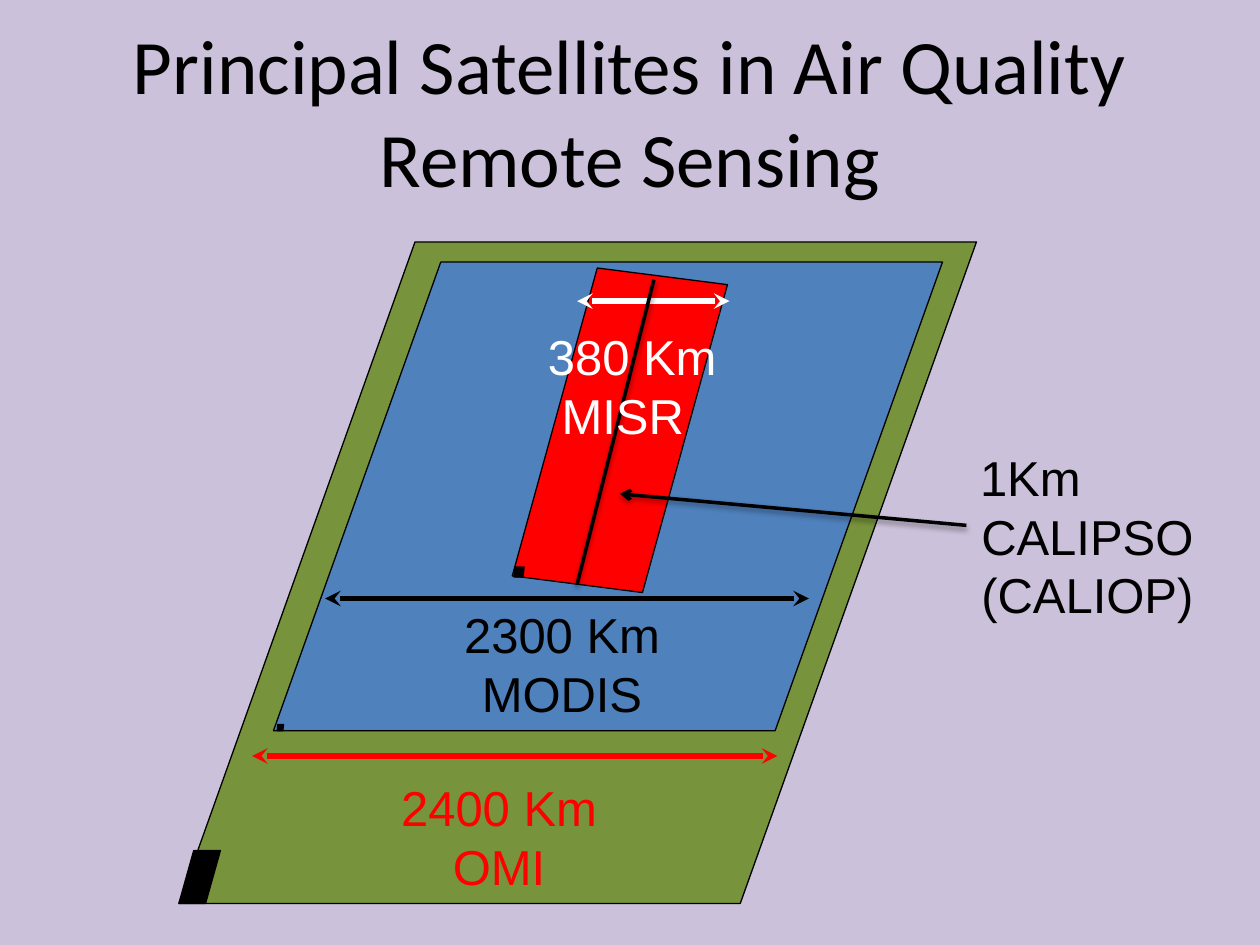
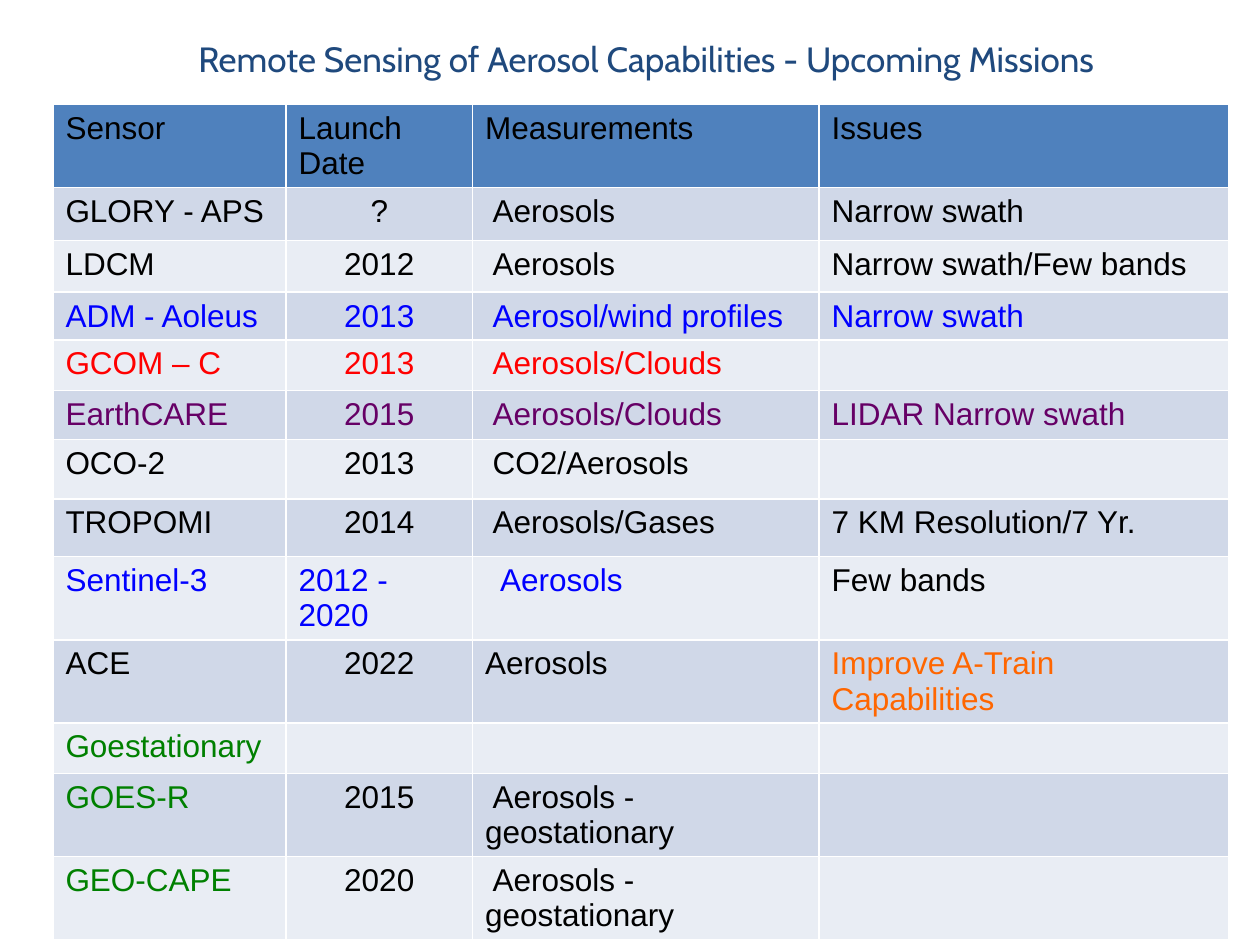
"""Build two slides on satellite swaths and upcoming aerosol missions."""
from dataclasses import dataclass

from lxml import etree
from pptx import Presentation, util as u
from pptx.dml.color import RGBColor
from pptx.enum import shapes, text
from pptx.oxml import parse_xml
from pptx.oxml.ns import nsdecls, qn

COLOURS = dict(
    ink="000000", white="FFFFFF", lilac="CCC1DA", olive="77933C", blue="4F81BD",
    red="FF0000", navy="1F497D", dark_band="D0D8E8", light_band="E9EDF4",
    link_blue="0000FF", purple="660066", orange="FF6600", green="008000",
)


@dataclass(frozen=True)
class Style:
    """Type face, size and colour of a piece of text."""
    font: str
    size: int
    colour: str


@dataclass(frozen=True)
class Theme:
    """Text styles and line widths shared by both slides."""
    main_title: Style = Style("Calibri", 44, "ink")
    table_title: Style = Style("Cabin", 20, "navy")
    label_font: str = "Arial"
    label_size: int = 28
    cell_size: int = 18
    outline: float = 0.75
    swath_width: float = 3
    track_width: float = 2
    cell_border: float = 1


THEME = Theme()
LEFT, CENTER = text.PP_ALIGN.LEFT, text.PP_ALIGN.CENTER

SWATHS = [
    ((1.42, 1.92, 6.33, 5.25), 0.357, 0, "olive"),
    ((2.17, 2.08, 5.31, 3.72), 0.357, 0, "blue"),
    ((4.22, 2.16, 1.4, 2.51), 0.256, 7.3, "red"),
]
PIXELS = [
    ((1.42, 6.75, 0.33, 0.42), 0.357, 0, "ink"),
    ((2.2, 5.75, 0.05, 0.05), 0.106, 0, "ink"),
    ((4.08, 4.5, 0.08, 0.08), 0.106, 0, "ink"),
]
WIDTH_ARROWS = [
    (4.58, 5.79, 2.39, "white"),
    (2.58, 6.42, 4.75, "ink"),
    (2, 6.17, 6, "red"),
]
TRACKS = [
    ((5.19, 2.22), (4.58, 4.64), None),
    ((7.67, 4.17), (4.92, 3.92), "arrow"),
]
LABELS = [
    ((3.5, 4.75, 1.92, 1.04), [("2300 Km MODIS", CENTER, 0)], "ink", True),
    ((3, 6.12, 1.92, 1.04), [("2400 Km OMI", CENTER, 0)], "red", True),
    ((7.68, 3.5, 1.9, 1.99),
     [("1Km", LEFT, 0), ("CALIPSO", CENTER, 0), ("(CALIOP)", CENTER, 0)], "ink", True),
    ((4.25, 2.54, 1.56, 1.51), [("380 Km", LEFT, 0), ("MISR", LEFT, 0.11)], "white", False),
]

HEADERS = ["Sensor", "Launch Date", "Measurements", "Issues"]
COLUMN_WIDTHS = [1.85, 1.48, 2.75, 3.25]
HEADER_HEIGHT = 0.66
MISSIONS = [
    (0.42, "ink", ["GLORY - APS", "?", "Aerosols", "Narrow swath"]),
    (0.41, "ink", ["LDCM", "2012", "Aerosols", "Narrow swath/Few bands"]),
    (0.38, "link_blue", ["ADM - Aoleus", "2013", "Aerosol/wind profiles", "Narrow swath"]),
    (0.4, "red", ["GCOM – C", "2013", "Aerosols/Clouds", ""]),
    (0.39, "purple", ["EarthCARE", "2015", "Aerosols/Clouds", "LIDAR Narrow swath"]),
    (0.47, "ink", ["OCO-2", "2013", "CO2/Aerosols", ""]),
    (0.46, "ink", ["TROPOMI", "2014", "Aerosols/Gases", "7 KM Resolution/7 Yr."]),
    (0.66, "link_blue", ["Sentinel-3", "2012 - 2020", "Aerosols", "Few bands"]),
    (0.66, "ink", ["ACE", "2022", "Aerosols", "Improve A-Train Capabilities"]),
    (0.4, "green", ["Goestationary", "", "", ""]),
    (0.66, "ink", ["GOES-R", "2015", "Aerosols - geostationary", ""]),
    (0.66, "ink", ["GEO-CAPE", "2020", "Aerosols - geostationary", ""]),
]
CELL_COLOURS = {"Few bands": "ink", "Improve A-Train Capabilities": "orange",
                "GOES-R": "green", "GEO-CAPE": "green"}
MEASUREMENT_INDENT = 0.06
SENSOR_INDENTS = {"Sentinel-3": 0.12, "ACE": 0}


def colour(name):
    return RGBColor.from_string(COLOURS[name])


def inches(values):
    return [u.Inches(value) for value in values]


def paint(fill, name):
    fill.solid()
    fill.fore_color.rgb = colour(name)


def add_slide(presentation, background):
    slide = presentation.slides.add_slide(presentation.slide_layouts[6])
    paint(slide.background.fill, background)
    return slide


def format_paragraph(paragraph, style, alignment=LEFT, indent=0):
    paragraph.alignment = alignment
    if indent:
        paragraph._p.get_or_add_pPr().set("indent", str(u.Inches(indent)))
    for font in [paragraph.font] + [run.font for run in paragraph.runs]:
        font.name = style.font
        font.size = u.Pt(style.size)
        font.color.rgb = colour(style.colour)


def add_text(slide, box, lines, style, wrap=True, anchor=text.MSO_ANCHOR.TOP):
    text_frame = slide.shapes.add_textbox(*inches(box)).text_frame
    text_frame.word_wrap = wrap
    text_frame.vertical_anchor = anchor
    text_frame.text = "\n".join(line for line, _, _ in lines)
    for paragraph, (_, alignment, indent) in zip(text_frame.paragraphs, lines):
        format_paragraph(paragraph, style, alignment, indent)


def add_title(slide, box, title, style):
    add_text(slide, box, [(title, CENTER, 0)], style, anchor=text.MSO_ANCHOR.MIDDLE)


def add_parallelogram(slide, box, slant, rotation, fill):
    shape = slide.shapes.add_shape(shapes.MSO_SHAPE.PARALLELOGRAM, *inches(box))
    shape.adjustments[0] = slant
    shape.rotation = rotation
    shape.shadow.inherit = False
    paint(shape.fill, fill)
    shape.line.color.rgb = colour("ink")
    shape.line.width = u.Pt(THEME.outline)


def add_line(slide, start, end, name, width, head=None, tail=None, shadow=False):
    connector = slide.shapes.add_connector(
        shapes.MSO_CONNECTOR.STRAIGHT, *inches(start + end))
    connector.line.color.rgb = colour(name)
    connector.line.width = u.Pt(width)
    line = connector.line._get_or_add_ln()
    for tag, kind in (("a:headEnd", head), ("a:tailEnd", tail)):
        if kind:
            etree.SubElement(line, qn(tag), type=kind)
    effects = etree.SubElement(connector._element.spPr, qn("a:effectLst"))
    if shadow:
        effects.append(parse_xml(
            f'<a:outerShdw {nsdecls("a")} blurRad="{u.Pt(3.1)}" dist="{u.Pt(1.6)}" '
            f'dir="5400000" rotWithShape="0"><a:srgbClr val="{COLOURS["ink"]}">'
            '<a:alpha val="38000"/></a:srgbClr></a:outerShdw>'))


def add_borders(cell):
    properties = cell._tc.get_or_add_tcPr()
    for position, side in enumerate(("lnL", "lnR", "lnT", "lnB")):
        properties.insert(position, parse_xml(
            f'<a:{side} {nsdecls("a")} w="{u.Pt(THEME.cell_border)}"><a:solidFill>'
            f'<a:srgbClr val="{COLOURS["white"]}"/></a:solidFill></a:{side}>'))


def fill_cell(cell, content, background, name, alignment=LEFT, indent=0):
    cell.text_frame.text = content
    cell.margin_bottom = 0
    style = Style(THEME.label_font, THEME.cell_size, name)
    format_paragraph(cell.text_frame.paragraphs[0], style, alignment, indent)
    paint(cell.fill, background)
    add_borders(cell)


def build_swath_slide(presentation):
    slide = add_slide(presentation, "lilac")
    add_title(slide, (0.75, 0.25, 8.5, 1.25),
              "Principal Satellites in Air Quality\vRemote Sensing", THEME.main_title)
    for swath in SWATHS:
        add_parallelogram(slide, *swath)
    for left, right, top, name in WIDTH_ARROWS:
        add_line(slide, (left, top), (right, top), name, THEME.swath_width,
                 "stealth", "stealth")
    for start, end, tail in TRACKS:
        add_line(slide, start, end, "ink", THEME.track_width, tail=tail, shadow=True)
    for box, lines, name, wrap in LABELS:
        add_text(slide, box, lines, Style(THEME.label_font, THEME.label_size, name), wrap)
    for pixel in PIXELS:
        add_parallelogram(slide, *pixel)


def build_mission_slide(presentation):
    slide = add_slide(presentation, "white")
    add_title(slide, (0.42, 0.08, 9.42, 0.77),
              "Remote Sensing of Aerosol Capabilities - Upcoming Missions", THEME.table_title)
    heights = [HEADER_HEIGHT] + [height for height, _, _ in MISSIONS]
    box = (0.42, 0.83, sum(COLUMN_WIDTHS), sum(heights))
    table = slide.shapes.add_table(len(heights), len(HEADERS), *inches(box)).table
    table.first_row = table.horz_banding = False
    for column, width in zip(table.columns, COLUMN_WIDTHS):
        column.width = u.Inches(width)
    for row, height in zip(table.rows, heights):
        row.height = u.Inches(height)
    for index, header in enumerate(HEADERS):
        fill_cell(table.cell(0, index), header, "blue", "ink")
    for number, (_, row_colour, contents) in enumerate(MISSIONS, 1):
        band = "dark_band" if number % 2 else "light_band"
        for header, cell, content in zip(HEADERS, table.rows[number].cells, contents):
            single_year = header == "Launch Date" and len(content) <= 4
            indent = 0
            if header == "Measurements":
                indent = SENSOR_INDENTS.get(contents[0], MEASUREMENT_INDENT)
            fill_cell(cell, content, band, CELL_COLOURS.get(content, row_colour),
                      CENTER if single_year else LEFT, indent)


def main():
    presentation = Presentation()
    presentation.slide_width, presentation.slide_height = inches((10, 7.5))
    build_swath_slide(presentation)
    build_mission_slide(presentation)
    presentation.save("out.pptx")


if __name__ == "__main__":
    main()
